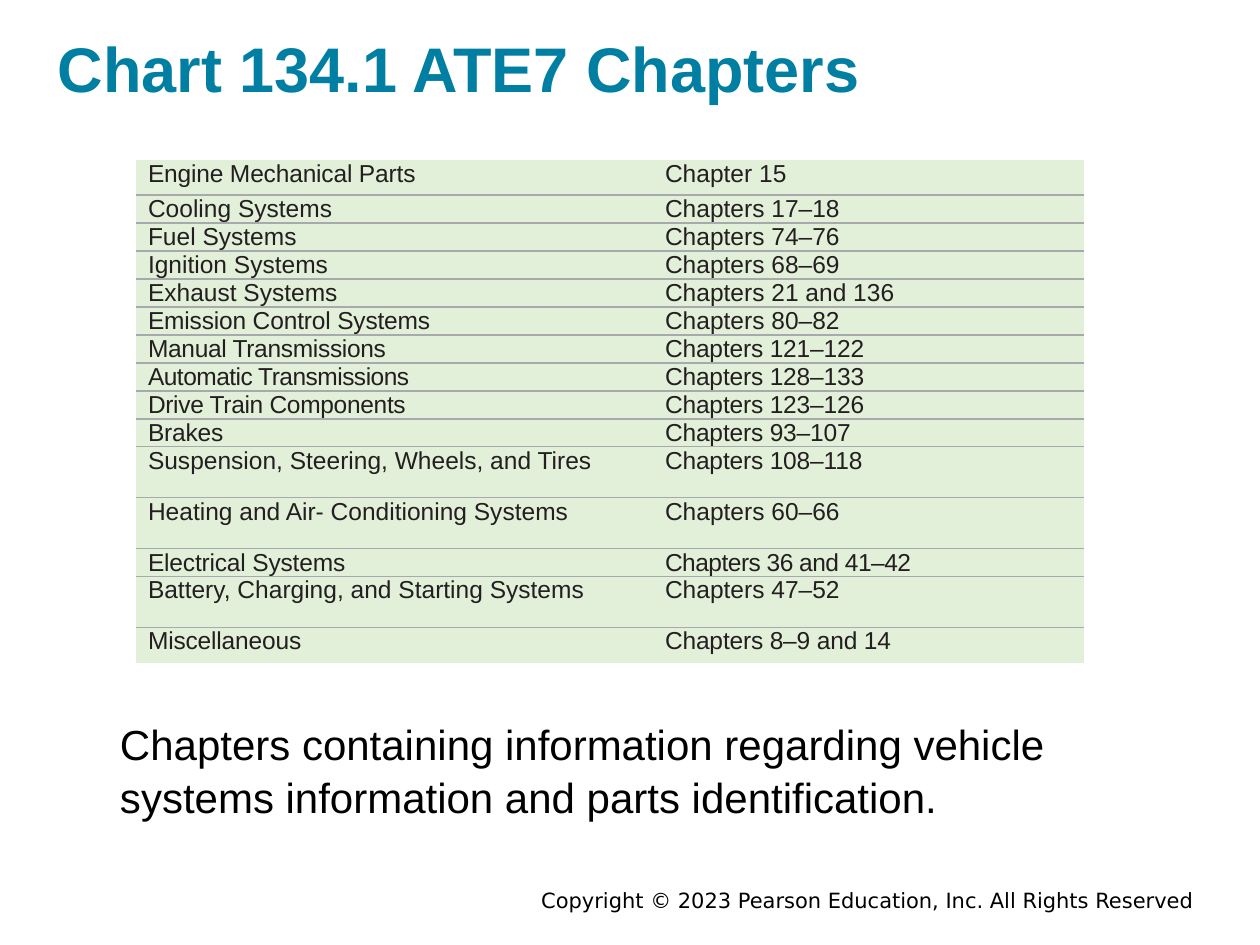
from lxml.etree import SubElement
from pptx import Presentation
from pptx.dml.color import RGBColor
from pptx.enum.text import MSO_ANCHOR as Anchor, MSO_AUTO_SIZE as AutoSize, PP_ALIGN as Align
from pptx.oxml import parse_xml
from pptx.oxml.ns import nsdecls, qn
from pptx.util import Emu, Pt

PX = 914400 / 126
TEAL, BLACK, INK, GREEN, GRAY = "007FA3", "000000", "231F20", "E2EFD9", "A7A9AC"
NO_STYLE = "{2D5ABB26-0587-4C30-8999-92F81FD0307C}"

# Table geometry in px
COLUMN_WIDTHS = (499, 449)
COLUMN_INDENTS = (12, 30)
ROW, END_ROW, TALL_ROW = 28, 35, 51

# System, chapters, row height, letter spacing of both cells (1/100 pt)
ROWS = [
    ("Engine Mechanical Parts", "Chapter 15", END_ROW, (-10, 0)),
    ("Cooling Systems", "Chapters 17–18", ROW, (0, 0)),
    ("Fuel Systems", "Chapters 74–76", ROW, (0, 0)),
    ("Ignition Systems", "Chapters 68–69", ROW, (0, 0)),
    ("Exhaust Systems", "Chapters 21 and 136", ROW, (0, 0)),
    ("Emission Control Systems", "Chapters 80–82", ROW, (-10, 0)),
    ("Manual Transmissions", "Chapters 121–122", ROW, (-20, -10)),
    ("Automatic Transmissions", "Chapters 128–133", ROW, (-30, -10)),
    ("Drive Train Components", "Chapters 123–126", ROW, (-20, -10)),
    ("Brakes", "Chapters 93–107", ROW, (-10, -10)),
    ("Suspension, Steering, Wheels, and Tires", "Chapters 108–118", TALL_ROW, (0, -10)),
    ("Heating and Air- Conditioning Systems", "Chapters 60–66", TALL_ROW, (0, 0)),
    ("Electrical Systems", "Chapters 36 and 41–42", ROW, (-10, -30)),
    ("Battery, Charging, and Starting Systems", "Chapters 47–52", TALL_ROW, (0, 0)),
    ("Miscellaneous", "Chapters 8–9 and 14", END_ROW, (-10, -10)),
]


def px(value):
    return Emu(round(value * PX))


def color(hex_text):
    return RGBColor.from_string(hex_text)


def set_all(target, values):
    for name, value in values.items():
        setattr(target, name, value)


def write(frame, text, size, hex_text, font="Arial", bold=False, indent=0, spacing=0):
    """Fill the first paragraph of a text frame and return it."""
    paragraph = frame.paragraphs[0]
    properties = paragraph._p.get_or_add_pPr()
    properties.set("marL", str(px(indent)))
    properties.set("indent", "0")
    SubElement(properties, qn("a:buNone"))
    paragraph.space_before = Pt(0)
    run = paragraph.add_run()
    run.text = text
    set_all(run.font, {"name": font, "size": Pt(size), "bold": bold})
    run.font.color.rgb = color(hex_text)
    if spacing:
        run._r.get_or_add_rPr().set("spc", str(spacing))
    return paragraph


def place(shape, left, top, width, height, anchor, side_margin):
    set_all(shape, {"left": px(left), "top": px(top), "width": px(width), "height": px(height)})
    set_all(shape.text_frame, {
        "word_wrap": True, "auto_size": AutoSize.NONE, "vertical_anchor": anchor,
        "margin_left": px(side_margin), "margin_right": px(side_margin),
        "margin_top": px(6), "margin_bottom": px(6),
    })
    return shape.text_frame


def add_rule(cell, tag):
    cell._tc.get_or_add_tcPr().insert(0, parse_xml(
        f'<a:{tag} {nsdecls("a")} w="{Pt(1)}"><a:solidFill>'
        f'<a:srgbClr val="{GRAY}"/></a:solidFill></a:{tag}>'))


def add_chapter_table(slide, left, top):
    heights = [row[2] for row in ROWS]
    table = slide.shapes.add_table(
        len(ROWS), len(COLUMN_WIDTHS), px(left), px(top),
        px(sum(COLUMN_WIDTHS)), px(sum(heights))).table
    set_all(table, {"first_row": False, "horz_banding": False})
    table._tbl.tblPr.find(qn("a:tableStyleId")).text = NO_STYLE
    for column, width in zip(table.columns, COLUMN_WIDTHS):
        column.width = px(width)

    for number, (system, chapters, height, spacings) in enumerate(ROWS):
        table.rows[number].height = px(height)
        cells = zip(table.rows[number].cells, (system, chapters), COLUMN_INDENTS, spacings)
        for cell, text, indent, spacing in cells:
            set_all(cell, {f"margin_{side}": 0 for side in ("left", "right", "top", "bottom")})
            write(cell.text_frame, text, 14, INK, indent=indent, spacing=spacing)
            cell.fill.solid()
            cell.fill.fore_color.rgb = color(GREEN)
            # Rules only between rows
            if number < len(ROWS) - 1:
                add_rule(cell, "lnB")
            if number > 0:
                add_rule(cell, "lnT")


def main():
    presentation = Presentation()
    set_all(presentation, {"slide_width": px(1260), "slide_height": px(945)})
    slide = presentation.slides.add_slide(presentation.slide_layouts[1])

    # Copyright line
    copyright_box = slide.shapes.add_textbox(0, 0, 0, 0)
    frame = place(copyright_box, 220, 886, 987, 28, Anchor.MIDDLE, 13)
    line = write(frame, "Copyright © 2023 Pearson Education, Inc. All Rights Reserved",
                 12, BLACK, font="DejaVu Sans")
    line.alignment = Align.RIGHT

    # Title
    frame = place(slide.shapes.title, 58, 21, 1133, 90, Anchor.BOTTOM, 0)
    title = write(frame, "Chart 134.1 ATE7 Chapters", 36, TEAL, bold=True)
    title.alignment = Align.LEFT

    # Caption below the table
    frame = place(slide.placeholders[1], 106, 709, 958, 165, Anchor.TOP, 0)
    caption = write(frame, "Chapters containing information regarding vehicle systems "
                    "information and parts identification.", 24, BLACK, indent=14)
    caption.line_spacing = 1.06

    # Chapter table
    add_chapter_table(slide, 136, 160)

    presentation.save("out.pptx")


if __name__ == "__main__":
    main()
